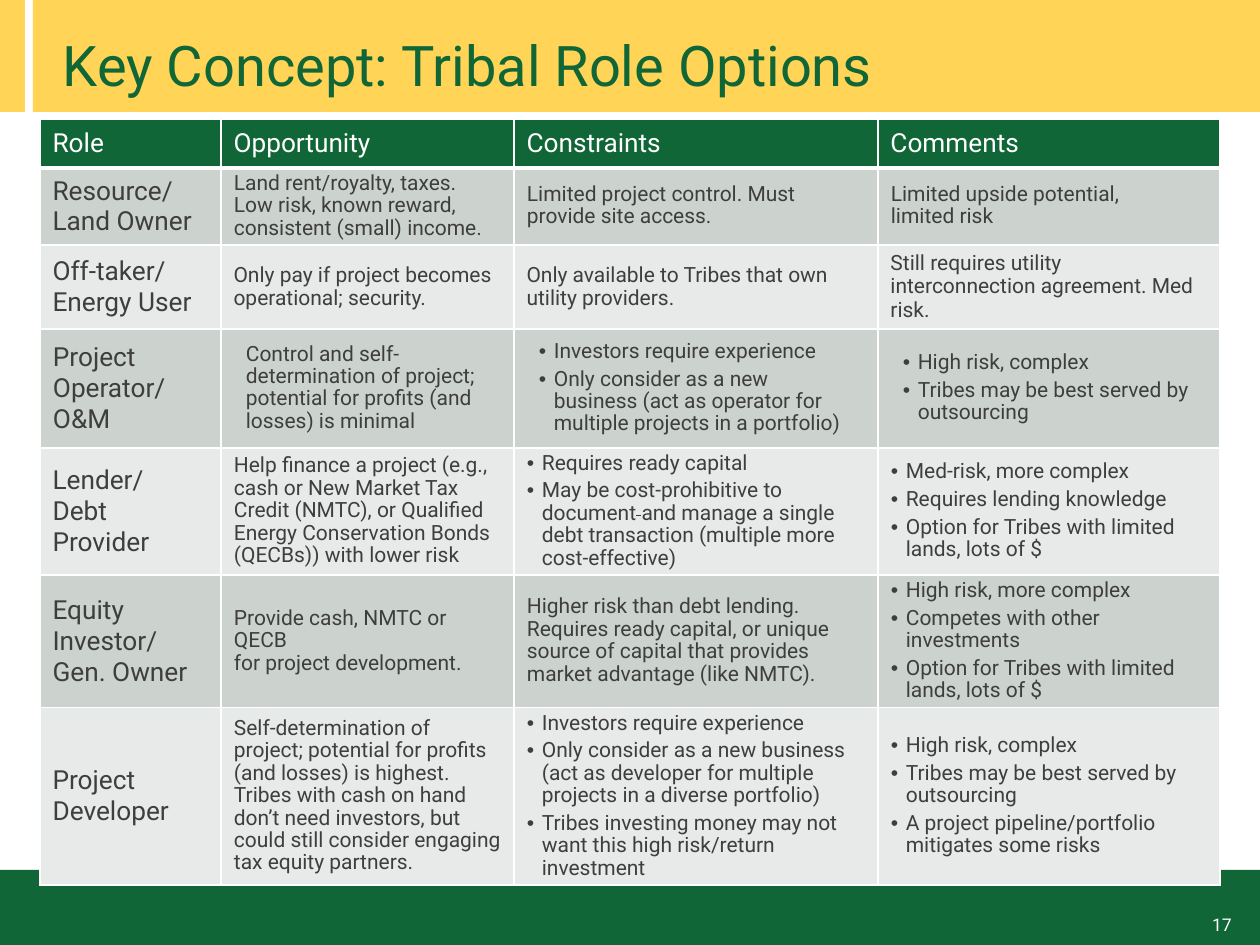
from lxml import etree
from pptx import Presentation
from pptx import util as u
from pptx.dml.color import RGBColor
from pptx.enum import shapes, text
from pptx.oxml import ns

GREEN = RGBColor(0x10, 0x66, 0x36)
YELLOW = RGBColor(0xFF, 0xD4, 0x57)
WHITE = RGBColor(0xFF, 0xFF, 0xFF)
GREY = RGBColor(0x3E, 0x3E, 0x3E)
BANDS = [RGBColor(0xCC, 0xD3, 0xCE), RGBColor(0xE7, 0xEA, 0xE8)]
FONT = "Roboto"

PX_PER_INCH = 126
COLS = [181, 293, 364, 342]
ROWS = [49, 77, 84, 118, 127, 132, 177]
HEADER = ["Role", "Opportunity", "Constraints", "Comments"]
STRUCK = "~"  # stands for one struck-through space
OFF_TAKER, OPERATOR = 2, 3  # rows with their own spacing and margins

# One row per role; a list holds bullets, a string holds plain text
ROLES = [
    ["Resource/ Land Owner",
     "Land rent/royalty, taxes.\nLow risk, known reward, consistent (small) income.",
     "Limited project control. Must provide site access.",
     "Limited upside potential,\nlimited risk"],
    ["Off-taker/\nEnergy User",
     "Only pay if project becomes operational; security.",
     "Only available to Tribes that own utility providers.",
     "Still requires utility interconnection agreement. Med risk."],
    ["Project Operator/ O&M",
     "Control and self-determination of project; potential for profits "
     "(and losses) is minimal",
     ["Investors require experience",
      "Only consider as a new business (act as operator for multiple "
      "projects in a portfolio)"],
     ["High risk, complex", "Tribes may be best served by outsourcing"]],
    ["Lender/\nDebt Provider",
     "Help finance a project (e.g., cash or New Market Tax Credit (NMTC), or "
     "Qualified Energy Conservation Bonds (QECBs)) with lower risk",
     ["Requires ready capital",
      "May be cost-prohibitive to\ndocument~and manage a single debt "
      "transaction (multiple more cost-effective)"],
     ["Med-risk, more complex", "Requires lending knowledge",
      "Option for Tribes with limited lands, lots of $"]],
    ["Equity Investor/\nGen. Owner",
     "Provide cash, NMTC or QECB\nfor project development.",
     "Higher risk than debt lending. Requires ready capital, or unique source "
     "of capital that provides\nmarket advantage (like NMTC).",
     ["High risk, more complex", "Competes with other investments",
      "Option for Tribes with limited lands, lots of $"]],
    ["Project Developer",
     "Self-determination of project; potential for profits (and losses) is "
     "highest. Tribes with cash on hand don’t need investors, but could still "
     "consider engaging tax equity partners.",
     ["Investors require experience",
      "Only consider as a new business\n(act as developer for multiple "
      "projects in a diverse portfolio)",
      "Tribes investing money may not want this high risk/return investment"],
     ["High risk, complex", "Tribes may be best served by outsourcing",
      "A project pipeline/portfolio mitigates some risks"]],
]


def px(n):
    return u.Emu(round(n * 914400 / PX_PER_INCH))


def add_run(p, words, size, color):
    r = p.add_run()
    r.text = words
    r.font.name, r.font.size, r.font.bold = FONT, u.Pt(size), False
    r.font.color.rgb = color
    return r


def add_bullet(p):
    pPr = p._p.get_or_add_pPr()
    pPr.set("marL", str(px(15)))
    pPr.set("indent", str(-px(15)))
    etree.SubElement(pPr, ns.qn("a:buFont"), typeface="Arial")
    etree.SubElement(pPr, ns.qn("a:buChar"), char="•")


def write(tf, content, size=12, color=GREY, align=text.PP_ALIGN.LEFT,
          spacing=None, after=0):
    """Fill a text frame with a string, or with a list of bullets."""
    bulleted = isinstance(content, list)
    for i, words in enumerate(content if bulleted else [content]):
        p = tf.add_paragraph() if i else tf.paragraphs[0]
        if bulleted:
            add_bullet(p)
        p.alignment = align
        p.space_before, p.space_after = u.Pt(0), u.Pt(after)
        if spacing:
            p.line_spacing = u.Pt(spacing)
        for j, line in enumerate(words.split("\n")):
            if j:
                p.add_line_break()
            for k, part in enumerate(line.split(STRUCK)):
                if k:
                    space = add_run(p, " ", size, color)
                    space._r.get_or_add_rPr().set("strike", "sngStrike")
                add_run(p, part, size, color)


def add_band(s, left, top, width, height, color):
    sp = s.shapes.add_shape(shapes.MSO_SHAPE.RECTANGLE,
                            px(left), px(top), px(width), px(height))
    sp.shadow.inherit = False
    sp.fill.solid()
    sp.fill.fore_color.rgb = color
    sp.line.fill.background()


def add_rule(s, x1, y1, x2, y2):
    line = s.shapes.add_connector(shapes.MSO_CONNECTOR.STRAIGHT,
                                  px(x1), px(y1), px(x2), px(y2))
    line.line.color.rgb = GREEN
    line.line.width = u.Pt(0.5)
    etree.SubElement(line._element.spPr, ns.qn("a:effectLst"))


def style_cell(cell, fill, bottom=1):
    """Centre the cell vertically, give it white borders and a fill."""
    cell.vertical_anchor = text.MSO_ANCHOR.MIDDLE
    tcPr = cell._tc.get_or_add_tcPr()
    for side, width in zip("LRTB", (1, 1, 1, bottom)):
        ln = etree.SubElement(tcPr, ns.qn(f"a:ln{side}"), w=str(u.Pt(width)))
        solid = etree.SubElement(ln, ns.qn("a:solidFill"))
        etree.SubElement(solid, ns.qn("a:srgbClr"), val=str(WHITE))
    cell.fill.solid()
    cell.fill.fore_color.rgb = fill


def set_margins(cell, left, right, vertical):
    cell.margin_left, cell.margin_right = px(left), px(right)
    cell.margin_top = cell.margin_bottom = px(vertical)


def add_role_table(s, left, top):
    frame = s.shapes.add_table(len(ROWS), len(COLS), px(left), px(top),
                               px(sum(COLS)), px(sum(ROWS)))
    table = frame.table
    for col, width in zip(table.columns, COLS):
        col.width = px(width)
    for row, height in zip(table.rows, ROWS):
        row.height = px(height)
    for c, words in enumerate(HEADER):
        cell = table.cell(0, c)
        style_cell(cell, GREEN, bottom=3)
        write(cell.text_frame, words, size=15, color=WHITE)
    for r, role in enumerate(ROLES, 1):
        for c, content in enumerate(role):
            cell = table.cell(r, c)
            style_cell(cell, BANDS[(r - 1) % 2])
            if c == 0:
                write(cell.text_frame, content, size=15)
                if r == OPERATOR:
                    set_margins(cell, 13, 25, 13)
            elif r == OFF_TAKER:
                write(cell.text_frame, content, spacing=13.5, after=2)
            else:
                write(cell.text_frame, content, spacing=12.8, after=3)
                side = 25 if r == OPERATOR else 13
                set_margins(cell, side, side, 5)


def place_title(s, words):
    title = s.shapes.title
    title.left, title.top, title.width, title.height = map(px, (50, 24, 1134, 136))
    tf = title.text_frame
    tf.vertical_anchor = text.MSO_ANCHOR.TOP
    write(tf, words, size=32, color=GREEN)
    s.shapes._spTree.append(title._element)  # bring in front of the bands


def add_page_number(s, number):
    tf = s.shapes.add_textbox(px(1184), px(908), px(76), px(37)).text_frame
    tf.word_wrap = True
    write(tf, number, size=10, color=WHITE, align=text.PP_ALIGN.CENTER)


def main():
    prs = Presentation()
    prs.slide_width, prs.slide_height = px(1260), px(945)
    s = prs.slides.add_slide(prs.slide_layouts[5])
    add_band(s, 0, 870, 1260, 75, GREEN)
    add_band(s, 0, 0, 25, 112, YELLOW)
    add_band(s, 33, 0, 1227, 112, YELLOW)
    add_rule(s, 0, 870, 1260, 870)
    add_page_number(s, "17")
    place_title(s, "Key Concept: Tribal Role Options")
    add_role_table(s, 40, 119)
    prs.save("out.pptx")


if __name__ == "__main__":
    main()
